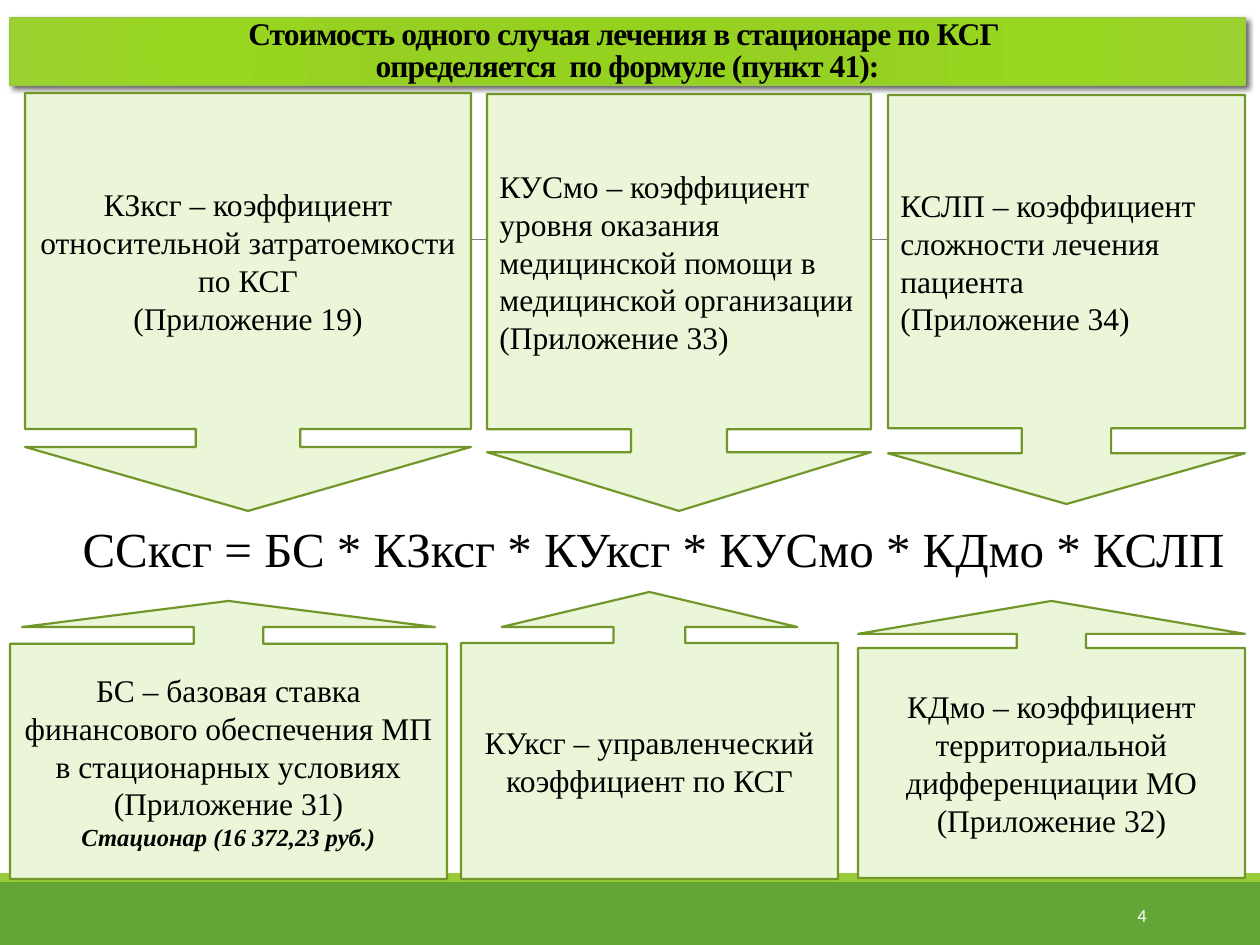
from lxml import etree
from pptx import Presentation
from pptx.dml.color import RGBColor
from pptx.enum.shapes import MSO_CONNECTOR, MSO_SHAPE
from pptx.enum.text import MSO_ANCHOR, MSO_AUTO_SIZE, PP_ALIGN
from pptx.oxml.ns import qn
from pptx.util import Emu, Pt

RECT, UP, DOWN = MSO_SHAPE.RECTANGLE, MSO_SHAPE.UP_ARROW_CALLOUT, MSO_SHAPE.DOWN_ARROW_CALLOUT
LEFT, CENTER, RIGHT = PP_ALIGN.LEFT, PP_ALIGN.CENTER, PP_ALIGN.RIGHT
MIDDLE, TOP = MSO_ANCHOR.MIDDLE, MSO_ANCHOR.TOP
SERIF, SANS = "Times New Roman", "Calibri"
PX = 914400 / 126
COLORS = {"green": "63A537", "lime": "99CB38", "pale": "EBF5D7", "olive": "719629",
          "gray": "808080", "black": "000000", "white": "FFFFFF"}
TITLE_STOPS = [(0, "95D220"), (34, "96D023"), (70, "99D720"), (100, "9BD231")]


def px(n):
    return Emu(round(n * PX))


def rgb(name):
    return RGBColor.from_string(COLORS[name])


def sub(parent, tag, **attrs):
    return etree.SubElement(parent, qn(tag), {k: str(v) for k, v in attrs.items()})


class Deck:
    def __init__(self):
        self.prs = Presentation()
        self.prs.slide_width, self.prs.slide_height = px(1260), px(945)
        self.s = self.prs.slides.add_slide(self.prs.slide_layouts[5])

    def fill_text(self, tf, lines, size, align=CENTER, anchor=MIDDLE, font=SERIF, color="black"):
        tf.word_wrap = True
        tf.vertical_anchor = anchor
        for i, line in enumerate(lines):
            p = tf.paragraphs[0] if i == 0 else tf.add_paragraph()
            p.text = line
            p.alignment = align
            p.font.size, p.font.name = Pt(size), font
            p.font.color.rgb = rgb(color)

    def shape(self, kind, box, fill, line=None):
        sp = self.s.shapes.add_shape(kind, *map(px, box))
        sp.shadow.inherit = False
        sp.fill.solid()
        sp.fill.fore_color.rgb = rgb(fill)
        if line:
            sp.line.color.rgb = rgb(line)
            sp.line.width = Pt(1.25)
        else:
            sp.line.fill.background()
        return sp

    def callout(self, kind, box, adj, lines, align=CENTER, note=None):
        sp = self.shape(kind, box, "pale", "olive")
        for i, value in enumerate(adj):
            sp.adjustments[i] = value
        self.fill_text(sp.text_frame, lines, 18, align)
        if note:
            p = sp.text_frame.add_paragraph()
            p.text, p.alignment = note, align
            p.font.size, p.font.name = Pt(14), SERIF
            p.font.bold = p.font.italic = True
            p.font.color.rgb = rgb("black")

    def text(self, box, line, size, **style):
        tf = self.s.shapes.add_textbox(*map(px, box)).text_frame
        self.fill_text(tf, [line], size, **style)

    def rule(self, x1, y1, x2, y2):
        c = self.s.shapes.add_connector(MSO_CONNECTOR.STRAIGHT, *map(px, (x1, y1, x2, y2)))
        c.line.color.rgb = rgb("gray")
        c.line.width = Pt(0.5)
        sub(c._element.spPr, "a:effectLst")

    def title(self, box, line):
        sp = self.s.shapes.title
        sp.left, sp.top, sp.width, sp.height = map(px, box)
        sp.line.color.rgb = rgb("lime")
        sp.line.width = Pt(1)
        # Radial gradient and soft shadow
        spPr = sp._element.spPr
        grad = etree.Element(qn("a:gradFill"), rotWithShape="1")
        stops = sub(grad, "a:gsLst")
        for pos, color in TITLE_STOPS:
            sub(sub(stops, "a:gs", pos=pos * 1000), "a:srgbClr", val=color)
        sub(sub(grad, "a:path", path="circle"), "a:fillToRect",
            l=100000, t=100000, r=100000, b=100000)
        spPr.find(qn("a:ln")).addprevious(grad)
        shadow = sub(sub(spPr, "a:effectLst"), "a:outerShdw", blurRad=Pt(3), dist=Pt(2),
                     dir=45 * 60000, algn="tl", rotWithShape=0)
        sub(sub(shadow, "a:srgbClr", val=COLORS["black"]), "a:alpha", val=60000)
        # Text
        tf = sp.text_frame
        tf.auto_size = MSO_AUTO_SIZE.NONE
        self.fill_text(tf, [line], 18)
        p = tf.paragraphs[0]
        p.font.bold, p.line_spacing = True, 0.85
        for r in p.runs:
            r._r.get_or_add_rPr().set("spc", "-50")


def main():
    d = Deck()

    # Background bands and rule
    d.shape(RECT, (0, 882, 1260, 63), "green")
    d.shape(RECT, (0, 873, 1260, 9), "lime")
    d.rule(123, 239, 1153, 239)

    d.title((10, 18, 1235, 67), "Стоимость одного случая лечения в стационаре по КСГ \v"
                                "определяется  по формуле (пункт 41):")

    # Formula
    d.text((41, 512, 1225, 72), "ССксг = БС * КЗксг * КУксг * КУСмо * КДмо * КСЛП", 28,
           anchor=TOP)

    # Factors above the formula
    d.callout(DOWN, (25, 93, 446, 418), (0.25, 0.821, 0.153, 0.804),
              ["КЗксг – коэффициент относительной затратоемкости по КСГ", "(Приложение 19)"])
    d.callout(DOWN, (487, 94, 384, 417), (0.25, 0.703, 0.153, 0.804),
              ["КУСмо – коэффициент уровня оказания медицинской помощи в медицинской организации",
               "(Приложение 33)"], LEFT)
    d.callout(DOWN, (888, 95, 357, 409), (0.25, 0.739, 0.142, 0.815),
              ["КСЛП – коэффициент сложности лечения пациента", "(Приложение 34)"], LEFT)

    # Factors below the formula
    d.callout(UP, (10, 601, 437, 278), (0.25, 0.743, 0.094, 0.846),
              ["БС – базовая ставка финансового обеспечения МП в стационарных условиях",
               "(Приложение 31)"], note="Стационар (16 372,23 руб.)")
    d.callout(UP, (461, 592, 377, 287), (0.25, 0.515, 0.122, 0.822),
              ["КУксг – управленческий коэффициент по КСГ"])
    d.callout(UP, (858, 601, 387, 277), (0.25, 0.752, 0.119, 0.83),
              ["КДмо – коэффициент территориальной дифференциации МО", "(Приложение 32)"])

    # Slide number
    d.text((1023, 890, 136, 50), "4", 10.5, align=RIGHT, font=SANS, color="white")

    d.prs.save("out.pptx")


if __name__ == "__main__":
    main()
